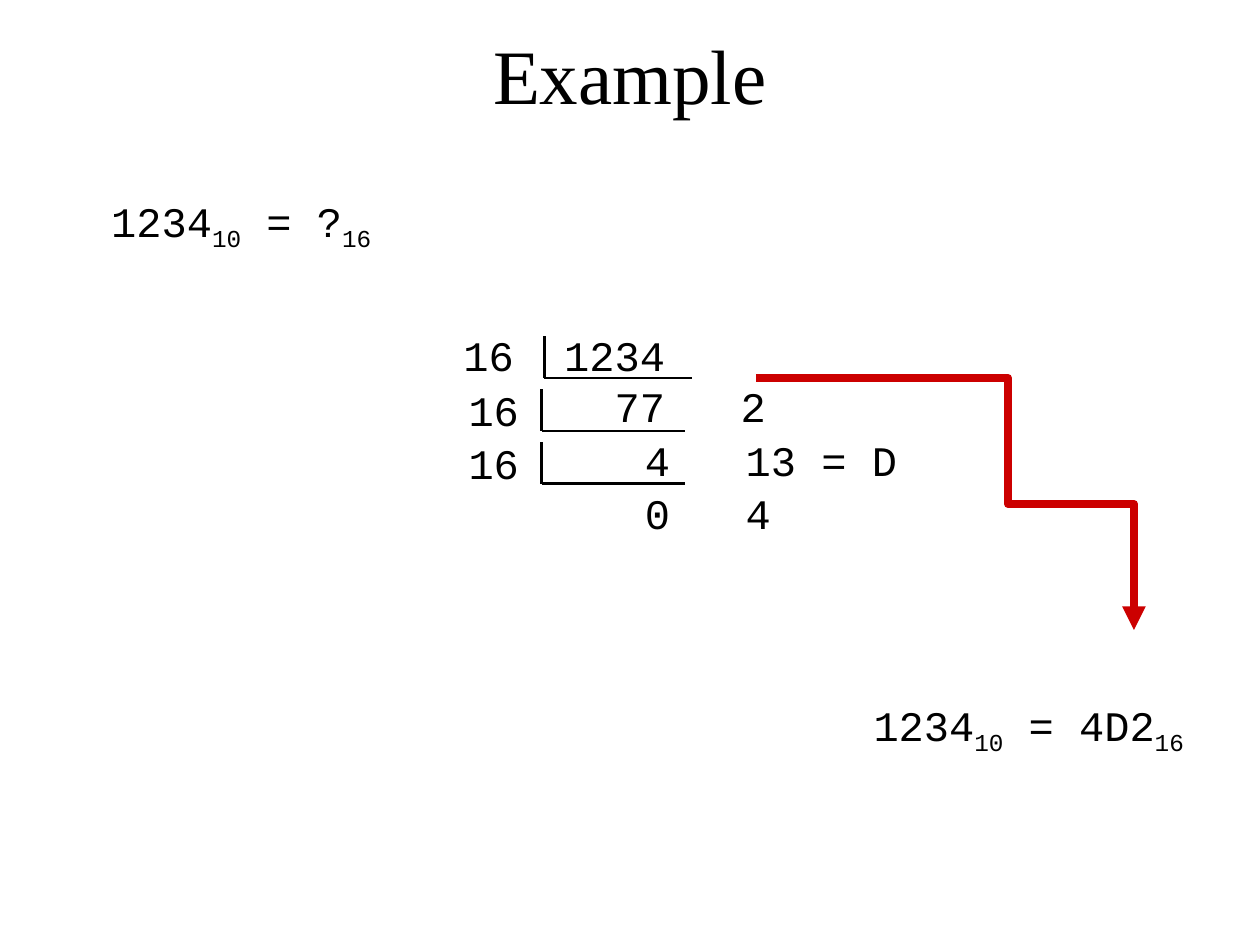
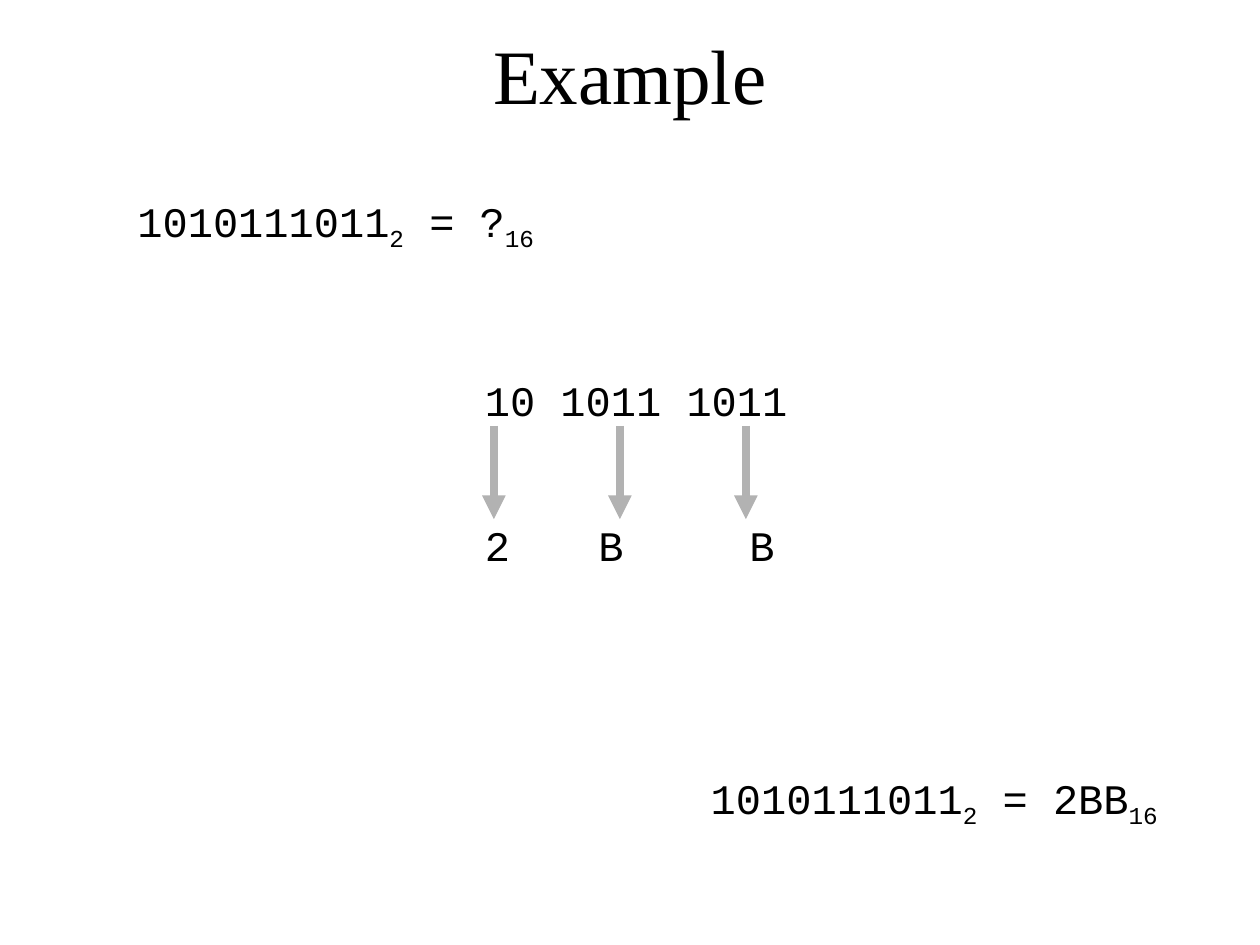
from dataclasses import dataclass

from lxml.etree import SubElement
from pptx import Presentation
from pptx.dml.color import RGBColor
from pptx.enum.shapes import MSO_CONNECTOR
from pptx.enum.text import MSO_ANCHOR, PP_ALIGN
from pptx.oxml.ns import qn
from pptx.util import Inches, Pt


@dataclass(frozen=True)
class Theme:
    ink: RGBColor = RGBColor(0x00, 0x00, 0x00)
    red: RGBColor = RGBColor(0xCC, 0x00, 0x00)
    grey: RGBColor = RGBColor(0xB2, 0xB2, 0xB2)
    title_font: str = "Times New Roman"
    code_font: str = "Courier New"
    title_size: int = 44
    code_size: int = 24
    thin: float = 1.5
    thick: float = 4.5
    subscript: int = -25000


def bezier(start, first, second, end, steps=16):
    for step in range(1, steps + 1):
        t = step / steps
        weights = ((1 - t) ** 3, 3 * t * (1 - t) ** 2, 3 * t**2 * (1 - t), t**3)
        yield tuple(
            sum(weight * value for weight, value in zip(weights, values))
            for values in zip(start, first, second, end)
        )


class SlideBuilder:
    def __init__(self, deck, theme):
        self.deck = deck
        self.theme = theme
        self.slide = None

    def add_slide(self, title):
        self.slide = self.deck.slides.add_slide(self.deck.slide_layouts[5])
        box = self.slide.shapes.title
        box.left, box.top = Inches(0.75), Inches(0.17)
        box.width, box.height = Inches(8.5), Inches(0.83)
        frame = box.text_frame
        frame.text = title
        frame.vertical_anchor = MSO_ANCHOR.MIDDLE
        para = frame.paragraphs[0]
        para.alignment = PP_ALIGN.CENTER
        self.style(para.runs[0], self.theme.title_font, self.theme.title_size)

    def style(self, span, font, size):
        span.font.name = font
        span.font.size = Pt(size)
        span.font.color.rgb = self.theme.ink

    def text_box(self, left, top, width, height):
        box = self.slide.shapes.add_textbox(
            Inches(left), Inches(top), Inches(width), Inches(height)
        )
        box.text_frame.word_wrap = True
        return box.text_frame

    def equation(self, left, top, width, number, base, result):
        para = self.text_box(left, top, width, 0.5).paragraphs[0]
        para.alignment = PP_ALIGN.CENTER
        for index, text in enumerate((number, base, f" = {result}", "16")):
            span = para.add_run()
            span.text = text
            self.style(span, self.theme.code_font, self.theme.code_size)
            if index % 2:
                span._r.get_or_add_rPr().set("baseline", str(self.theme.subscript))

    def columns(self, left, top, width, height, rows, gap=0):
        frame = self.text_box(left, top, width, height)
        for index, (text, stops) in enumerate(rows):
            para = frame.add_paragraph() if index else frame.paragraphs[0]
            para.text = text
            if index:
                para.space_before = Pt(gap)
            tabs = SubElement(para._p.get_or_add_pPr(), qn("a:tabLst"))
            for stop in stops:
                SubElement(tabs, qn("a:tab"), pos=str(Inches(stop)), algn="l")
            for span in para.runs:
                self.style(span, self.theme.code_font, self.theme.code_size)

    def outline(self, shape, color, width, arrow):
        shape.line.color.rgb = color
        shape.line.width = Pt(width)
        if arrow:
            SubElement(shape.line._get_or_add_ln(), qn("a:tailEnd"), type="triangle")

    def line(self, start, end, color, width, arrow=False):
        connector = self.slide.shapes.add_connector(
            MSO_CONNECTOR.STRAIGHT, *(Inches(value) for value in start + end)
        )
        self.outline(connector, color, width, arrow)
        SubElement(connector._element.spPr, qn("a:effectLst"))

    def curved_arrow(self, start, curves):
        points = [start]
        for curve in curves:
            points.extend(bezier(points[-1], *curve))
        pen = self.slide.shapes.build_freeform(*start, scale=Inches(1))
        pen.add_line_segments(points[1:], close=False)
        arrow = pen.convert_to_shape()
        arrow.shadow.inherit = False
        arrow.fill.background()
        self.outline(arrow, self.theme.red, self.theme.thick, arrow=True)

    def division_bracket(self, left, top, right):
        corner = (left, top + 0.33)
        for start, end in (((left, top), corner), (corner, (right, corner[1]))):
            self.line(start, end, self.theme.ink, self.theme.thin)


def decimal_slide(builder):
    builder.add_slide("Example")
    builder.equation(0.33, 1.5, 3.17, "1234", "10", "?")
    builder.equation(6.58, 5.5, 3.17, "1234", "10", "4D2")
    builder.curved_arrow(
        (6.42, 3.17),
        [
            ((6.72, 3.21), (7.78, 3.04), (8.22, 3.42)),
            ((8.68, 3.79), (8.87, 5.03), (9.04, 5.45)),
        ],
    )
    builder.columns(
        3.58, 2.57, 2.7, 0.9, [("16\t1234", [0.8]), ("\t77\t2", [1.2, 2.2])]
    )
    builder.division_bracket(4.32, 2.67, 5.49)
    for index, remainder in enumerate(("\t4\t13 = D", "\t0\t4")):
        top = 3 + 0.42 * index
        builder.columns(
            3.62, top, 3.88, 0.9, [("16", []), (remainder, [1.4, 2.2])]
        )
        builder.division_bracket(4.3, top + 0.09, 5.44)


def binary_slide(builder):
    builder.add_slide("Example")
    builder.equation(0.33, 1.5, 4.67, "1010111011", "2", "?")
    builder.columns(
        3.75, 2.92, 4.67, 1.7,
        [("10 1011 1011", []), ("2\tB\tB", [0.9, 2.1])],
        gap=54.5,
    )
    for index in range(3):
        x = 3.92 + index
        builder.line(
            (x, 3.38), (x, 4.12), builder.theme.grey, builder.theme.thick, arrow=True
        )
    builder.equation(5.08, 6.08, 4.67, "1010111011", "2", "2BB")


def main():
    deck = Presentation()
    deck.slide_width, deck.slide_height = Inches(10), Inches(7.5)
    builder = SlideBuilder(deck, Theme())
    decimal_slide(builder)
    binary_slide(builder)
    deck.save("out.pptx")


if __name__ == "__main__":
    main()
